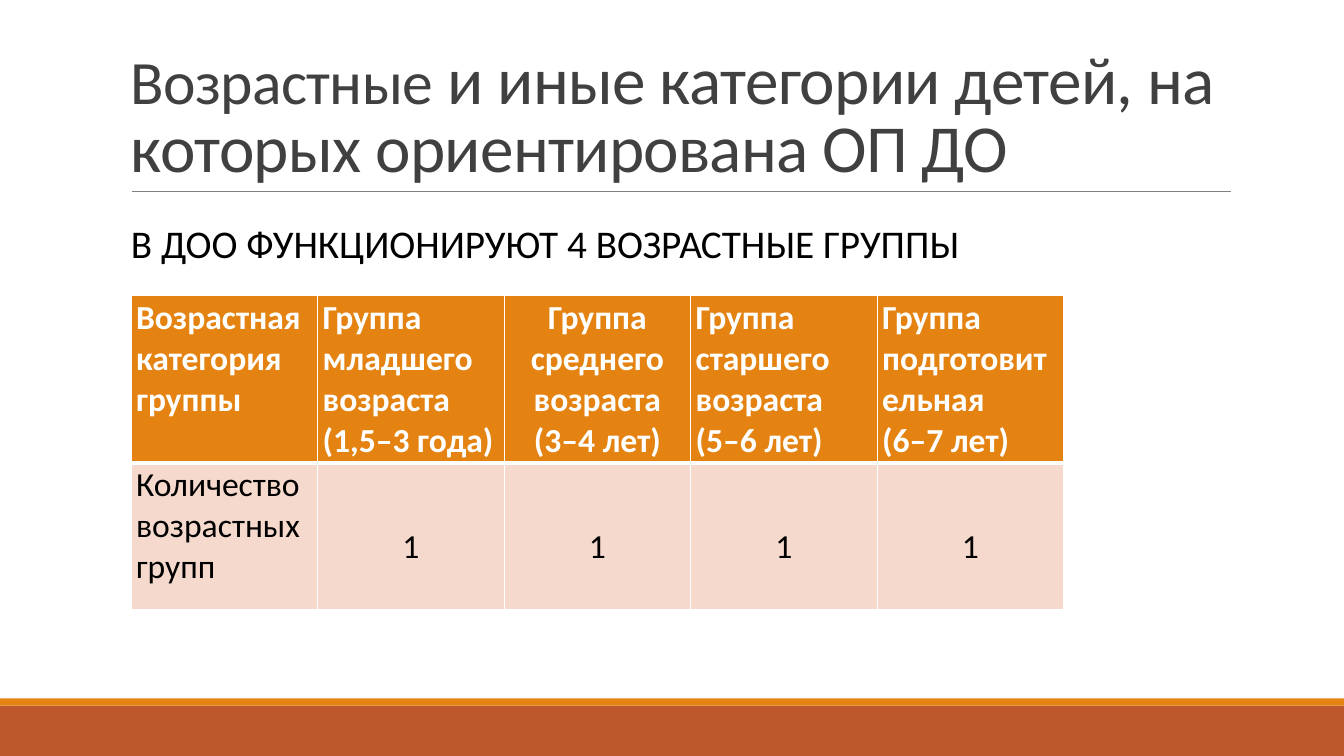
from lxml.etree import SubElement
from pptx import Presentation
from pptx.dml.color import RGBColor
from pptx.enum.shapes import MSO_CONNECTOR as Connector, MSO_SHAPE as Shape
from pptx.enum.text import MSO_ANCHOR as Anchor, PP_ALIGN as Align
from pptx.oxml.ns import qn
from pptx.util import Inches, Pt

WIDTH, HEIGHT = 13.33, 7.5
FONT = "Calibri"
ORANGE, RUST, PEACH = "E48312", "BD582C", "F5D9CC"
WHITE, BLACK, DARK, GREY = "FFFFFF", "000000", "404040", "808080"
COLUMN_WIDTH = 1.85
ROW_HEIGHTS = (1.66, 1.46)

HEADER = [
    ["Возрастная категория группы"],
    ["Группа младшего возраста", "(1,5–3 года)"],
    ["Группа среднего возраста (3–4 лет)"],
    ["Группа старшего возраста", "(5–6 лет)"],
    ["Группа подготовительная", "(6–7 лет)"],
]
COUNTS = [["Количество возрастных групп"], ["1"], ["1"], ["1"], ["1"]]
CENTRED_HEADER = 2


def color(value):
    return RGBColor.from_string(value)


def add_run(para, text, size, ink, bold=False, tracking=None):
    run = para.add_run()
    run.text = text
    run.font.name, run.font.size, run.font.bold = FONT, Pt(size), bold
    run.font.color.rgb = color(ink)
    if tracking is not None:
        run.font._element.set("spc", str(int(tracking * 100)))


def add_band(page, top, height, fill):
    band = page.shapes.add_shape(
        Shape.RECTANGLE, 0, Inches(top), Inches(WIDTH), Inches(height))
    band.shadow.inherit = False
    band.fill.solid()
    band.fill.fore_color.rgb = color(fill)
    band.line.fill.background()


def add_rule(page, left, right, top):
    rule = page.shapes.add_connector(
        Connector.STRAIGHT, Inches(left), Inches(top), Inches(right), Inches(top))
    rule.line.color.rgb = color(GREY)
    rule.line.width = Pt(0.5)
    SubElement(rule._element.spPr, qn("a:effectLst"))


def add_text(page, place, anchor, spacing):
    box = page.shapes.add_textbox(*map(Inches, place))
    frame = box.text_frame
    frame.word_wrap = True
    frame.vertical_anchor = anchor
    para = frame.paragraphs[0]
    para.line_spacing = spacing
    return para


def set_borders(cell, widths):
    properties = cell._tc.get_or_add_tcPr()
    for index, (side, width) in enumerate(widths.items()):
        line = properties.makeelement(qn(f"a:ln{side}"), {"w": str(Pt(width))})
        fill = SubElement(line, qn("a:solidFill"))
        SubElement(fill, qn("a:srgbClr"), val=WHITE)
        properties.insert(index, line)


def fill_cell(cell, lines, fill, ink, bold, centred, spacing, borders):
    cell.margin_left = cell.margin_right = Inches(0.05)
    cell.margin_top = cell.margin_bottom = Inches(0.02)
    cell.fill.solid()
    cell.fill.fore_color.rgb = color(fill)
    set_borders(cell, borders)
    frame = cell.text_frame
    for index, text in enumerate(lines):
        para = frame.add_paragraph() if index else frame.paragraphs[0]
        para.alignment = Align.CENTER if centred else Align.LEFT
        para.line_spacing = spacing
        add_run(para, text, 24, ink, bold)


def add_group_table(page, left, top):
    table = page.shapes.add_table(
        len(ROW_HEIGHTS), len(HEADER), Inches(left), Inches(top),
        Inches(COLUMN_WIDTH * len(HEADER)), Inches(sum(ROW_HEIGHTS))).table
    for column in table.columns:
        column.width = Inches(COLUMN_WIDTH)
    for row, height in zip(table.rows, ROW_HEIGHTS):
        row.height = Inches(height)
    for index, (header, count) in enumerate(zip(HEADER, COUNTS)):
        fill_cell(table.cell(0, index), header, ORANGE, WHITE, True,
                  index == CENTRED_HEADER, 1.0, {"L": 1, "R": 1, "T": 1, "B": 3})
        is_number = index > 0
        fill_cell(table.cell(1, index), count, PEACH, BLACK, False,
                  is_number, 2.5 if is_number else 1.0,
                  {"L": 1, "R": 1, "T": 3, "B": 1})


def main():
    deck = Presentation()
    deck.slide_width, deck.slide_height = Inches(WIDTH), Inches(HEIGHT)
    page = deck.slides.add_slide(deck.slide_layouts[6])

    # Footer bands and the rule under the title
    add_band(page, 7, 0.5, RUST)
    add_band(page, 6.93, 0.07, ORANGE)
    add_rule(page, 1.31, 12.21, 1.9)

    # Title
    title = add_text(page, (1.2, 0.31, 11, 1.59), Anchor.BOTTOM, 0.85)
    add_run(title, "Возрастные", 44, DARK, tracking=-0.5)
    add_run(title, " и иные категории детей, на которых ориентирована ОП ДО",
            48, DARK, tracking=-0.5)

    # Subtitle
    subtitle = add_text(page, (1.2, 2.15, 9.15, 0.58), Anchor.MIDDLE, 0.9)
    subtitle.space_before, subtitle.space_after = Pt(12), Pt(2)
    add_run(subtitle, "В ДОО ФУНКЦИОНИРУЮТ 4 ВОЗРАСТНЫЕ ГРУППЫ", 28, BLACK)

    # Age groups
    add_group_table(page, 1.3, 2.93)
    deck.save("out.pptx")


if __name__ == "__main__":
    main()
